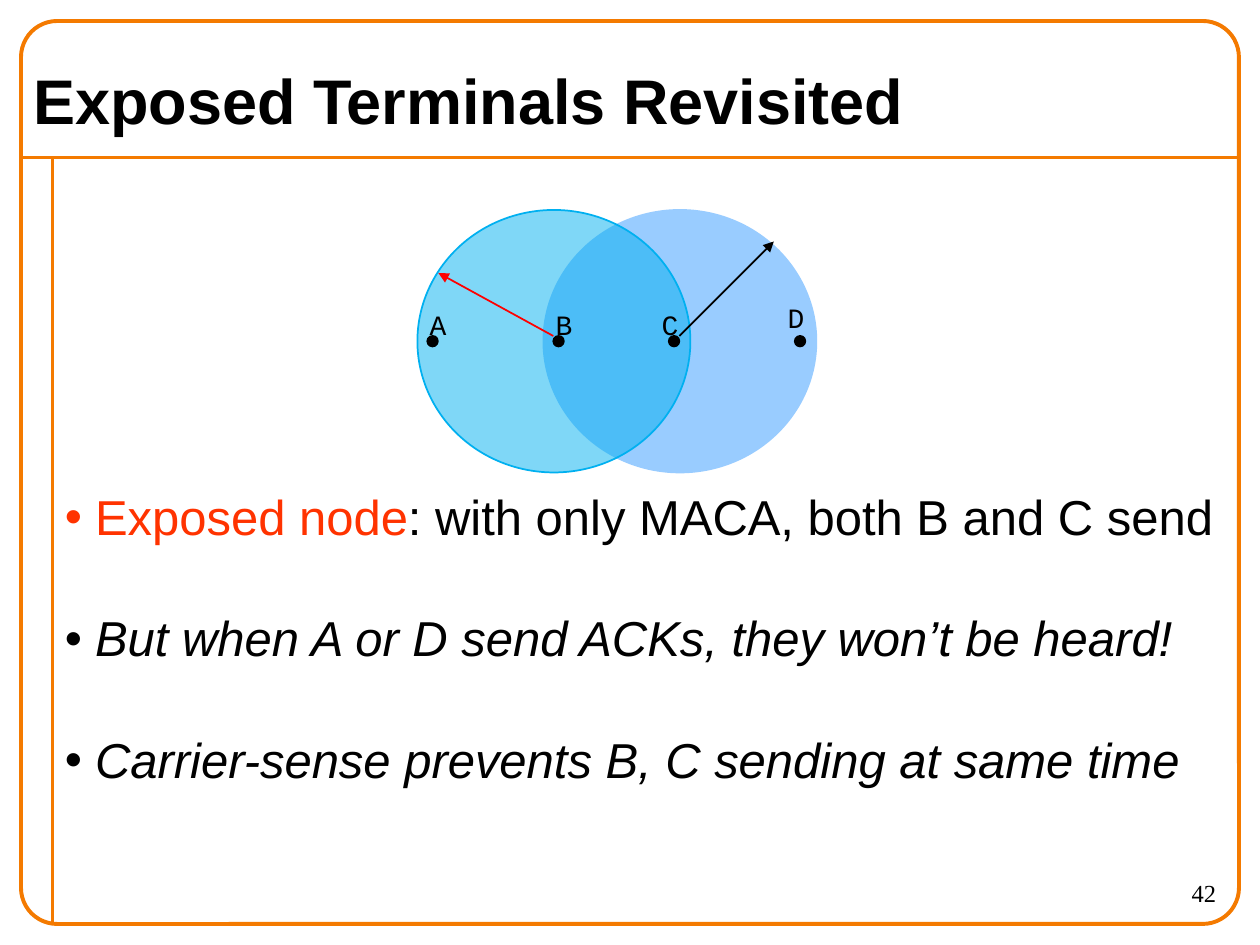
"""Build the exposed terminals slide on a grid of 120 columns by 90 rows."""
from lxml.etree import SubElement
from pptx import Presentation
from pptx.dml.color import RGBColor
from pptx.enum.shapes import MSO_CONNECTOR, MSO_SHAPE
from pptx.enum.text import MSO_ANCHOR, PP_ALIGN
from pptx.oxml.ns import qn
from pptx.util import Inches, Pt

deck = Presentation()
deck.slide_width, deck.slide_height = Inches(10), Inches(7.5)
page = deck.slides.add_slide(deck.slide_layouts[6]).shapes
unit = deck.slide_width / 120


def grid(*cells):
    return [round(cell * unit) for cell in cells]


def tint(hue):
    return RGBColor.from_string(hue)


orange, black, red = "F47A00", "000000", "FF0000"

rules = [
    ((2, 15, 118, 15), orange, 2.25, False),
    ((5, 15, 5, 88), orange, 2.25, False),
    ((64.7, 32, 73.7, 23), black, 1, True),
    ((52.7, 32, 41.75, 26), red, 1, True),
]
for ends, hue, width, arrow in rules:
    rule = page.add_connector(MSO_CONNECTOR.STRAIGHT, *grid(*ends))
    rule.line.color.rgb = tint(hue)
    rule.line.width = Pt(width)
    props = rule._element.spPr
    if arrow:
        SubElement(props.find(qn("a:ln")), qn("a:tailEnd"), type="triangle")
    SubElement(props, qn("a:effectLst"))

disc = MSO_SHAPE.OVAL
forms = [
    (MSO_SHAPE.ROUNDED_RECTANGLE, (2, 2, 116, 86), None, orange, 2.25),
    (disc, (51.75, 20, 26, 25), "99CCFF", "99CCFF", 1),
    (disc, (39.75, 20, 26, 25), "00B0F0", "00B0F0", 1),
]
forms += [(disc, (col, 32, 1, 1), black, black, 1) for col in (40.7, 52.7, 63.7, 75.7)]
spots = []
for kind, box, fill, edge, width in forms:
    form = page.add_shape(kind, *grid(*box))
    form.shadow.inherit = False
    if fill:
        form.fill.solid()
        form.fill.fore_color.rgb = tint(fill)
    else:
        form.fill.background()
        form.adjustments[0] = 0.04
    form.line.color.rgb = tint(edge)
    form.line.width = Pt(width)
    spots.append(form)
shade = spots[2]._element.spPr.find(qn("a:solidFill"))
SubElement(shade[0], qn("a:alpha"), val="50000")

for rule in [item for item in page if item.shape_type == 9 and item.line.width == Pt(1)]:
    page._spTree.append(rule._element)

left, mid, right = PP_ALIGN.LEFT, PP_ALIGN.CENTER, PP_ALIGN.RIGHT
top, core, base = MSO_ANCHOR.TOP, MSO_ANCHOR.MIDDLE, MSO_ANCHOR.BOTTOM
plain = {"name": "Arial", "size": Pt(28)}
tilt = {**plain, "italic": True}
head = {"name": "Arial", "size": Pt(36), "bold": True}
mark = {"name": "Courier New", "size": Pt(16)}
foot = {"name": "Times New Roman", "size": Pt(14)}
points = [
    [("Exposed node", "FF3300", plain),
     (": with only MACA, both B and C send", black, plain)],
    [("But when A or D send ACKs, they won’t be heard!", black, tilt)],
    [("Carrier-sense prevents B, C sending at same time", black, tilt)],
]
texts = [
    ((2, 5, 116, 9), [[("Exposed Terminals Revisited", black, head)]], left, core, True),
    ((105, 83, 12, 5), [[("42", black, foot)]], right, top, True),
    ((5, 27, 115, 54), points, left, base, True),
]
for name, col, row in [("A", 39.6, 28.7), ("B", 51.6, 28.7), ("C", 61.7, 28.7), ("D", 73.7, 28)]:
    texts.append(((col, row, 4.25, 4.3), [[(name, black, mark)]], mid, top, False))

for box, lines, align, anchor, wrap in texts:
    frame = page.add_textbox(*grid(*box)).text_frame
    frame.word_wrap, frame.vertical_anchor = wrap, anchor
    for rank, line in enumerate(lines):
        para = frame.add_paragraph() if rank else frame.paragraphs[0]
        para.alignment = align
        for words, hue, style in line:
            run = para.add_run()
            run.text = words
            run.font.color.rgb = tint(hue)
            for key, val in style.items():
                setattr(run.font, key, val)
        if lines is points:
            frame.margin_bottom = Inches(0.49)
            para.line_spacing = 0.9
            para.space_before = Pt(39 if rank else 0)
            props = para._p.get_or_add_pPr()
            props.set("marL", str(Inches(0.24)))
            props.set("indent", str(-Inches(0.24)))
            SubElement(props, qn("a:buFont"), typeface="Arial")
            SubElement(props, qn("a:buChar"), char="•")

deck.save("out.pptx")
